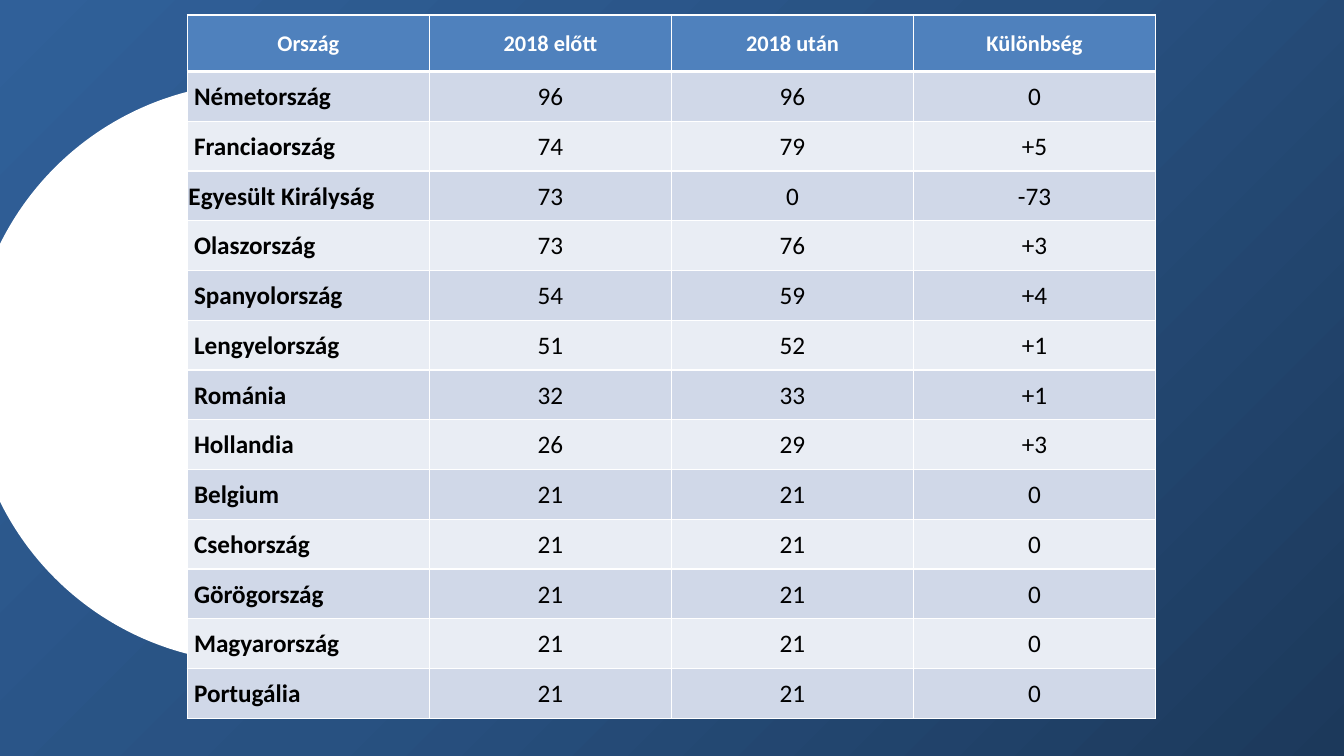
from copy import deepcopy
from lxml import etree
from pptx import Presentation
from pptx.dml.color import RGBColor
from pptx.enum import shapes, text
from pptx.oxml.ns import qn
from pptx.util import Cm, Pt

# Content
HEAD = ("Ország", "2018 előtt", "2018 után", "Különbség")
SEATS = [
    ("Németország", "96", "96", "0"),
    ("Franciaország", "74", "79", "+5"),
    ("Egyesült Királyság", "73", "0", "-73"),
    ("Olaszország", "73", "76", "+3"),
    ("Spanyolország", "54", "59", "+4"),
    ("Lengyelország", "51", "52", "+1"),
    ("Románia", "32", "33", "+1"),
    ("Hollandia", "26", "29", "+3"),
    ("Belgium", "21", "21", "0"),
    ("Csehország", "21", "21", "0"),
    ("Görögország", "21", "21", "0"),
    ("Magyarország", "21", "21", "0"),
    ("Portugália", "21", "21", "0"),
]
FLUSH = "Egyesült Királyság"  # the one name without an indent
COLORS = {"head": "4F81BD", "odd": "D0D8E8", "even": "E9EDF4",
          "white": "FFFFFF", "black": "000000"}
SHADES = [(0, "1C395B"), (0.5, "285181"), (1, "306099")]

# Sizes in cm
WIDE, HIGH = 33.87, 19.05
LEFT, TOP, TABLE_W, TABLE_H = 4.72, 0.38, 24.4, 17.73
HEAD_H = 1.42
ROW_H = (TABLE_H - HEAD_H) / len(SEATS)
PAD, INDENT = 0.03, 0.17


def rgb(name):
    return RGBColor.from_string(COLORS[name])


def add_form(slide, kind, *box):
    form = slide.shapes.add_shape(kind, *map(Cm, box))
    form.shadow.inherit = False
    form.line.fill.background()
    return form


def add_edges(cell, row):
    """White borders, thick between header and body."""
    props = cell._tc.get_or_add_tcPr()
    thick = {"lnB": row == 0, "lnT": row == 1}
    for tag in ("lnL", "lnR", "lnT", "lnB"):
        size = 3 if thick.get(tag) else 1
        line = etree.SubElement(props, qn("a:" + tag), w=str(Pt(size)))
        fill = etree.SubElement(line, qn("a:solidFill"))
        etree.SubElement(fill, qn("a:srgbClr"), val=COLORS["white"])


def fill_cell(cell, words, row, col):
    add_edges(cell, row)
    cell.fill.solid()
    cell.fill.fore_color.rgb = rgb(
        "head" if row == 0 else "odd" if row % 2 else "even")
    name = row > 0 and col == 0
    cell.margin_left = Cm(INDENT if name and words != FLUSH else PAD)
    cell.margin_right = cell.margin_top = Cm(PAD)
    cell.margin_bottom = 0
    cell.vertical_anchor = text.MSO_ANCHOR.MIDDLE
    cell.text = words
    para = cell.text_frame.paragraphs[0]
    para.alignment = text.PP_ALIGN.LEFT if name else text.PP_ALIGN.CENTER
    font = para.font
    font.name = "Calibri"
    font.size = Pt(18 if row else 16)
    font.bold = row == 0 or name
    font.color.rgb = rgb("black" if row else "white")


def main():
    deck = Presentation()
    deck.slide_width, deck.slide_height = Cm(WIDE), Cm(HIGH)
    slide = deck.slides.add_slide(deck.slide_layouts[6])

    # Gradient backdrop, dark at lower right
    back = add_form(slide, shapes.MSO_SHAPE.RECTANGLE, 0, 0, WIDE, 19.13)
    back.fill.gradient()
    back.fill.gradient_angle = 135
    first = back.fill._fill._gradFill.gsLst[0]
    first.addnext(deepcopy(first))
    for stop, (place, shade) in zip(back.fill.gradient_stops, SHADES):
        stop.position = place
        stop.color.rgb = RGBColor.from_string(shade)

    # White disc
    disc = add_form(slide, shapes.MSO_SHAPE.OVAL, -0.76, 2.08, 14.63, 14.63)
    disc.fill.solid()
    disc.fill.fore_color.rgb = rgb("white")

    # Table of seats
    rows = [HEAD] + SEATS
    table = slide.shapes.add_table(
        len(rows), len(HEAD), Cm(LEFT), Cm(TOP), Cm(TABLE_W), Cm(TABLE_H)).table
    for col in table.columns:
        col.width = Cm(TABLE_W / len(HEAD))
    for r, row in enumerate(rows):
        table.rows[r].height = Cm(ROW_H if r else HEAD_H)
        for c, words in enumerate(row):
            fill_cell(table.cell(r, c), words, r, c)

    deck.save("out.pptx")


if __name__ == "__main__":
    main()
